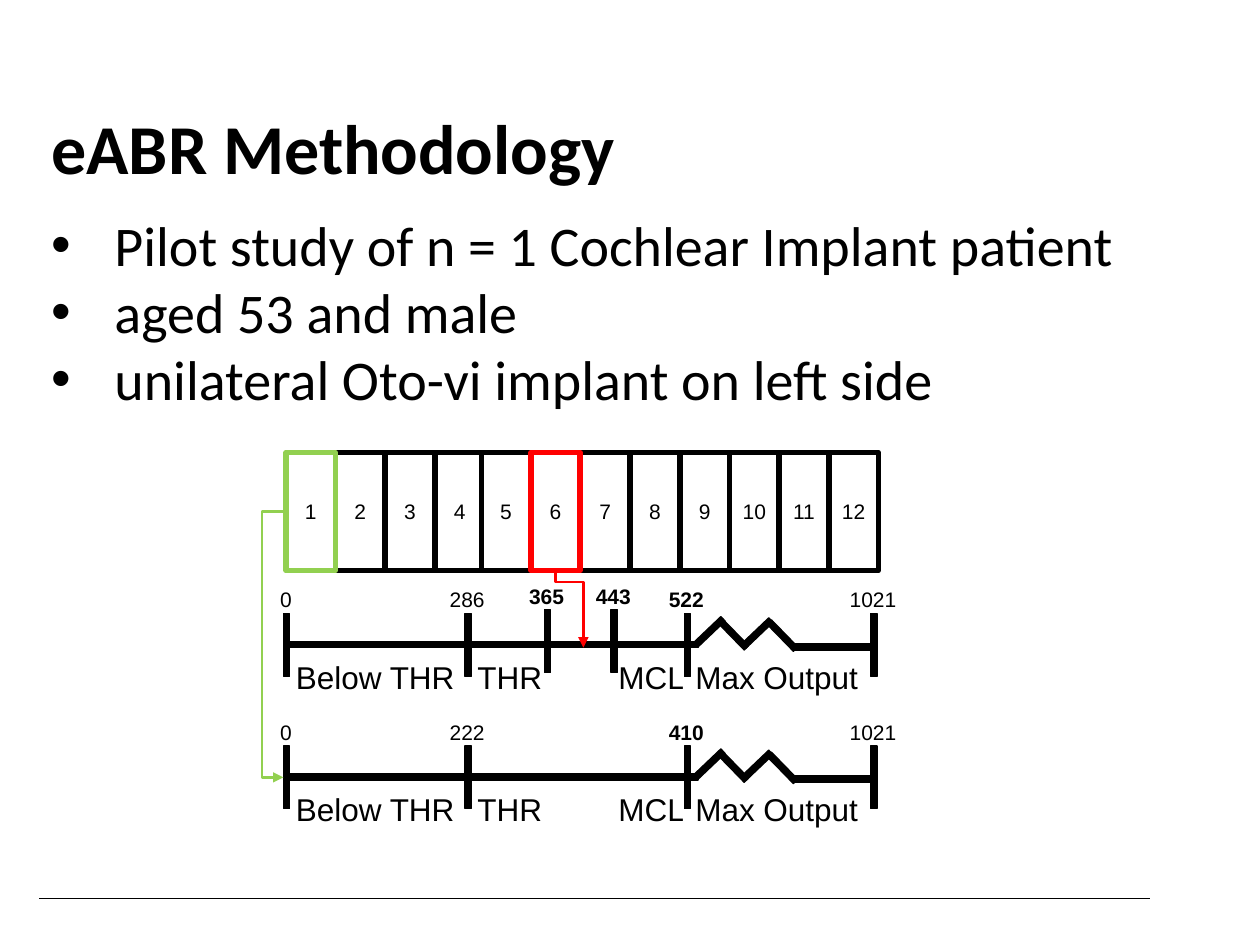
from pptx import Presentation
from pptx.dml.color import RGBColor
from pptx.enum.shapes import MSO_CONNECTOR, MSO_SHAPE
from pptx.enum.text import MSO_ANCHOR, PP_ALIGN
from pptx.oxml.ns import qn
from pptx.util import Inches, Pt
from lxml.etree import SubElement

BLACK = RGBColor(0x00, 0x00, 0x00)
WHITE = RGBColor(0xFF, 0xFF, 0xFF)
GREEN = RGBColor(0x92, 0xD0, 0x50)
RED = RGBColor(0xFF, 0x00, 0x00)

CELL = 0.39
STEP = (6.58 - 3.82) / 7
SCALE_GAP = 1.05


def write(shape, text, size=12, font="Arial", bold=False, bullet=False,
          align=PP_ALIGN.LEFT, anchor=MSO_ANCHOR.TOP, wrap=True, space=None):
    """Fill a shape with one paragraph per line of text."""
    frame = shape.text_frame
    frame.word_wrap = wrap
    frame.vertical_anchor = anchor
    frame.text = text
    for para in frame.paragraphs:
        para.alignment = align
        if space:
            para.line_spacing = space
        if bullet:
            props = para._p.get_or_add_pPr()
            props.set("marL", str(Inches(0.5)))
            props.set("indent", str(Inches(-0.5)))
            SubElement(props, qn("a:buFont"), typeface="Arial")
            SubElement(props, qn("a:buChar"), char="•")
        for run in para.runs:
            run.font.name = font
            run.font.size = Pt(size)
            run.font.bold = bold
            run.font.color.rgb = BLACK


def add_text(slide, x, y, w, h, text, **style):
    box = slide.shapes.add_textbox(Inches(x), Inches(y), Inches(w), Inches(h))
    write(box, text, font="Calibri", **style)


def add_rect(slide, x, y, w, h, fill=WHITE, line=None, width=0.75):
    rect = slide.shapes.add_shape(
        MSO_SHAPE.RECTANGLE, Inches(x), Inches(y), Inches(w), Inches(h))
    rect.shadow.inherit = False
    rect.fill.solid()
    rect.fill.fore_color.rgb = fill
    if line is None:
        rect.line.fill.background()
    else:
        rect.line.color.rgb = line
        rect.line.width = Pt(width)
    return rect


def add_bar(slide, x, y, w, h, turn=0):
    add_rect(slide, x, y, w, h, fill=BLACK, line=BLACK).rotation = turn


def add_label(slide, x, y, w, h, text, **style):
    write(add_rect(slide, x, y, w, h), text, wrap=False, **style)


def add_line(slide, start, end, color, width, kind=MSO_CONNECTOR.STRAIGHT):
    ends = [Inches(value) for value in (*start, *end)]
    line = slide.shapes.add_connector(kind, *ends)
    line.line.color.rgb = color
    line.line.width = Pt(width)
    SubElement(line._element.spPr, qn("a:effectLst"))
    return line


def add_arrow(slide, start, end, color, bend, turn=0):
    """Draw an elbow arrow; bend is the place of its middle leg."""
    arrow = add_line(slide, start, end, color, 1.5, MSO_CONNECTOR.ELBOW)
    props = arrow._element.spPr
    props.find(qn("a:xfrm")).set("rot", str(turn * 60000))
    guides = props.find(qn("a:prstGeom")).get_or_add_avLst()
    SubElement(guides, qn("a:gd"), name="adj1",
               fmla=f"val {round(bend * 100000)}")
    SubElement(props.find(qn("a:ln")), qn("a:tailEnd"), type="triangle")


def add_array(slide):
    """Draw the twelve electrodes, with the marked ones on top."""
    marks = {1: GREEN, 6: RED}
    for num in sorted(range(1, 13), key=lambda item: item in marks):
        x = 2.27 + (num - 1) * STEP if num < 5 else 3.82 + (num - 5) * STEP
        cell = add_rect(slide, x, 3.59, CELL, 0.94,
                        line=marks.get(num, BLACK), width=3)
        write(cell, str(num), align=PP_ALIGN.CENTER, anchor=MSO_ANCHOR.MIDDLE)


def add_scale(slide, top, ticks):
    """Draw a current scale; each tick is (x, rise, label, width, bold)."""
    # Tick values and range names
    for x, rise, text, width, bold in ticks:
        add_label(slide, x + 0.02 - width / 2, top - rise, width, 0.3,
                  text, bold=bold)
    names = [(2.25, 1.47, "Below THR"), (3.69, 0.72, "THR"),
             (4.81, 0.73, "MCL"), (5.42, 1.51, "Max Output")]
    for x, width, text in names:
        add_label(slide, x, top + 0.56, width, 0.4, text, size=18)

    # Axis with its break
    add_bar(slide, 2.25, top + 0.48, 3.29, 0.05)
    add_bar(slide, 6.3, top + 0.5, 0.66, 0.05)
    zigzag = [(5.48, 0.38, 316.4), (5.67, 0.4, 45.7),
              (5.86, 0.39, 316.4), (6.06, 0.41, 45.7)]
    for x, drop, turn in zigzag:
        add_bar(slide, x, top + drop, 0.3, 0.05, turn)

    # Tick marks
    for x, rise, *_ in ticks:
        add_bar(slide, x, top + 0.26 - rise, 0.05, 0.5)


def main():
    deck = Presentation()
    deck.slide_width, deck.slide_height = Inches(10), Inches(7.5)
    slide = deck.slides.add_slide(deck.slide_layouts[6])

    # Footer rule
    for color, width in ((WHITE, 1), (BLACK, 0.5)):
        add_line(slide, (0.31, 7.13), (9.13, 7.13), color, width)

    # Title and bullets
    add_text(slide, 0.31, 0.84, 8.82, 0.79, "eABR Methodology",
             size=40, bold=True, space=0.93)
    add_text(slide, 0.31, 1.62, 8.82, 1.72,
             "Pilot study of n = 1 Cochlear Implant patient\n"
             "aged 53 and male\n"
             "unilateral Oto-vi implant on left side",
             size=32, bullet=True)

    # Electrodes and their scales
    add_array(slide)
    low, high = (2.25, 0, "0", 0.29, False), (6.91, 0, "1021", 0.57, False)
    add_scale(slide, 4.61, [
        low, high, (3.69, 0, "286", 0.48, False), (5.43, 0, "522", 0.48, True),
        (4.32, 0.03, "365", 0.48, True), (4.85, 0.03, "443", 0.48, True)])
    add_scale(slide, 4.61 + SCALE_GAP, [
        low, high, (3.69, 0, "222", 0.48, False), (5.43, 0, "410", 0.48, True)])

    # Arrows from the marked electrodes
    add_arrow(slide, (4.82, 4.73), (4.22, 4.95), RED, 0.13, turn=270)
    add_arrow(slide, (2.27, 4.06), (2.25, 6.17), GREEN, 9.5)

    deck.save("out.pptx")


if __name__ == "__main__":
    main()
